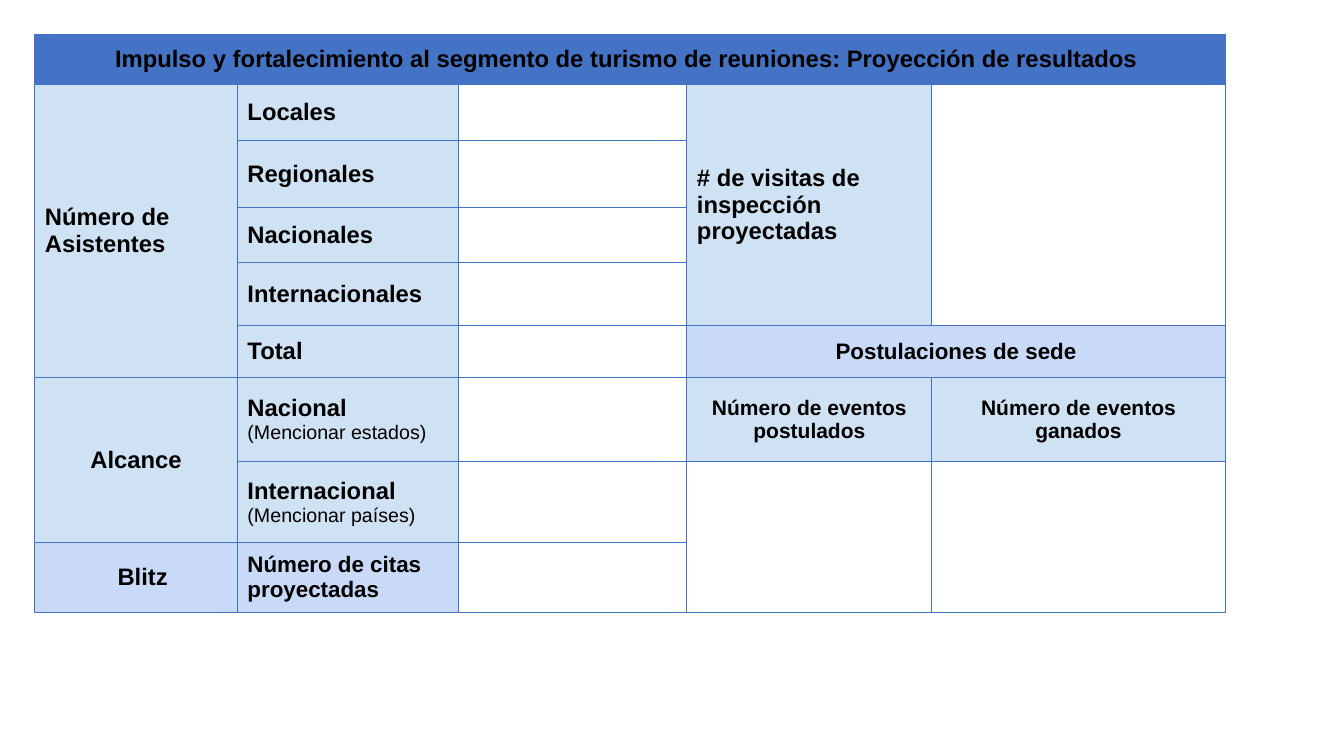
from lxml.etree import SubElement
from pptx import Presentation
from pptx.dml.color import RGBColor
from pptx.enum.text import MSO_ANCHOR, PP_ALIGN
from pptx.oxml.ns import qn
from pptx.util import Pt

BLUE = RGBColor(0x44, 0x72, 0xC4)
SKY = RGBColor(0xCF, 0xE2, 0xF3)
PERIWINKLE = RGBColor(0xC9, 0xDA, 0xF8)
BLACK = RGBColor(0, 0, 0)

COLS = [144.7, 157.7, 163.4, 175, 209.5]
ROWS = [35.3, 40.3, 48.2, 38.9, 45.4, 36.7, 60.5, 57.6, 44.6]
MERGES = [(0, 0, 0, 4), (1, 0, 5, 0), (1, 3, 4, 3), (1, 4, 4, 4),
          (5, 3, 5, 4), (6, 0, 7, 0), (7, 3, 8, 3), (7, 4, 8, 4)]
ATTENDEE_ROWS = ["Locales", "Regionales", "Nacionales", "Internacionales", "Total"]
CENTER = PP_ALIGN.CENTER


def set_borders(cell, color, width):
    tcPr = cell._tc.get_or_add_tcPr()
    for side in ("a:lnL", "a:lnR", "a:lnT", "a:lnB"):
        ln = SubElement(tcPr, qn(side), w=str(Pt(width)))
        fill = SubElement(ln, qn("a:solidFill"))
        SubElement(fill, qn("a:srgbClr"), val=str(color))


def add_run(p, text, size=17, bold=True):
    r = p.add_run()
    r.text = text
    r.font.name = "Arial"
    r.font.size = Pt(size)
    r.font.bold = bold
    r.font.color.rgb = BLACK


def write_cell(cell, text, size=17, fill=SKY, align=PP_ALIGN.LEFT, indent=0):
    cell.fill.solid()
    cell.fill.fore_color.rgb = fill
    cell.vertical_anchor = MSO_ANCHOR.MIDDLE
    cell.margin_top = cell.margin_right = cell.margin_bottom = Pt(7.2)
    cell.margin_left = Pt(7.2 + indent)
    p = cell.text_frame.paragraphs[0]
    p.alignment = align
    add_run(p, text, size)
    return p


def add_results_table(s, left, top):
    table = s.shapes.add_table(len(ROWS), len(COLS), Pt(left), Pt(top),
                               Pt(sum(COLS)), Pt(sum(ROWS))).table
    table.first_row = False
    table.horz_banding = False
    for column, width in zip(table.columns, COLS):
        column.width = Pt(width)
    for row, height in zip(table.rows, ROWS):
        row.height = Pt(height)
    for cell in table.iter_cells():
        set_borders(cell, BLUE, 0.75)
        cell.fill.background()
    for top_row, left_col, bottom_row, right_col in MERGES:
        table.cell(top_row, left_col).merge(table.cell(bottom_row, right_col))

    write_cell(table.cell(0, 0), "Impulso y fortalecimiento al segmento de turismo "
               "de reuniones: Proyección de resultados ", fill=BLUE, align=CENTER)
    write_cell(table.cell(1, 0), "Número de Asistentes")
    for i, label in enumerate(ATTENDEE_ROWS, 1):
        write_cell(table.cell(i, 1), label)
    write_cell(table.cell(1, 3), "# de visitas de inspección proyectadas")
    write_cell(table.cell(5, 3), "Postulaciones de sede", size=16,
               fill=PERIWINKLE, align=CENTER)

    write_cell(table.cell(6, 0), "Alcance", align=CENTER)
    p = write_cell(table.cell(6, 1), "Nacional ")
    add_run(p, "(Mencionar estados)", size=14, bold=False)
    write_cell(table.cell(7, 1), "Internacional")
    p = table.cell(7, 1).text_frame.add_paragraph()
    add_run(p, "(Mencionar países)", size=14, bold=False)
    for col, outcome in ((3, "postulados"), (4, "ganados")):
        write_cell(table.cell(6, col), f"Número de eventos {outcome}",
                   size=15, align=CENTER)

    write_cell(table.cell(8, 0), "Blitz", fill=PERIWINKLE, align=CENTER, indent=9.4)
    write_cell(table.cell(8, 1), "Número de citas proyectadas", size=16,
               fill=PERIWINKLE)


def main():
    prs = Presentation()
    prs.slide_width = Pt(960)
    prs.slide_height = Pt(540)
    s = prs.slides.add_slide(prs.slide_layouts[6])
    add_results_table(s, 24.9, 24.7)
    prs.save("out.pptx")


if __name__ == "__main__":
    main()
